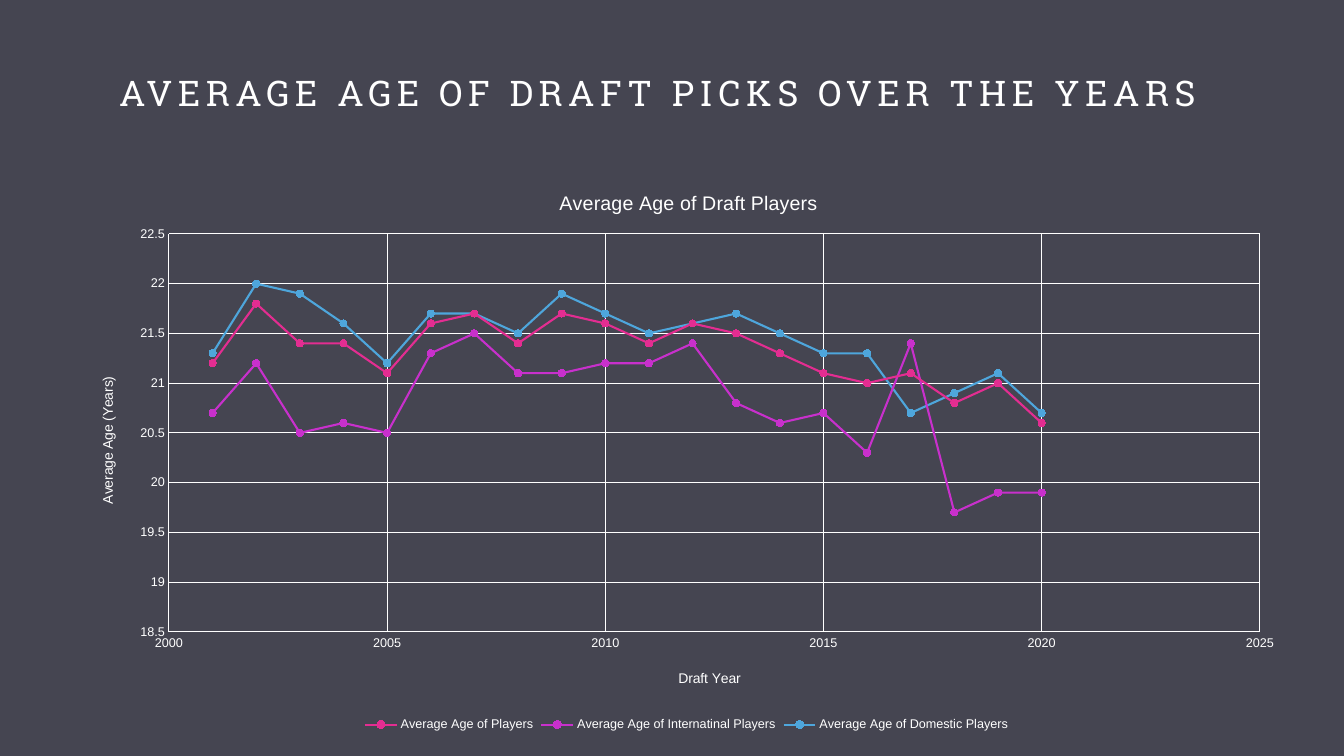
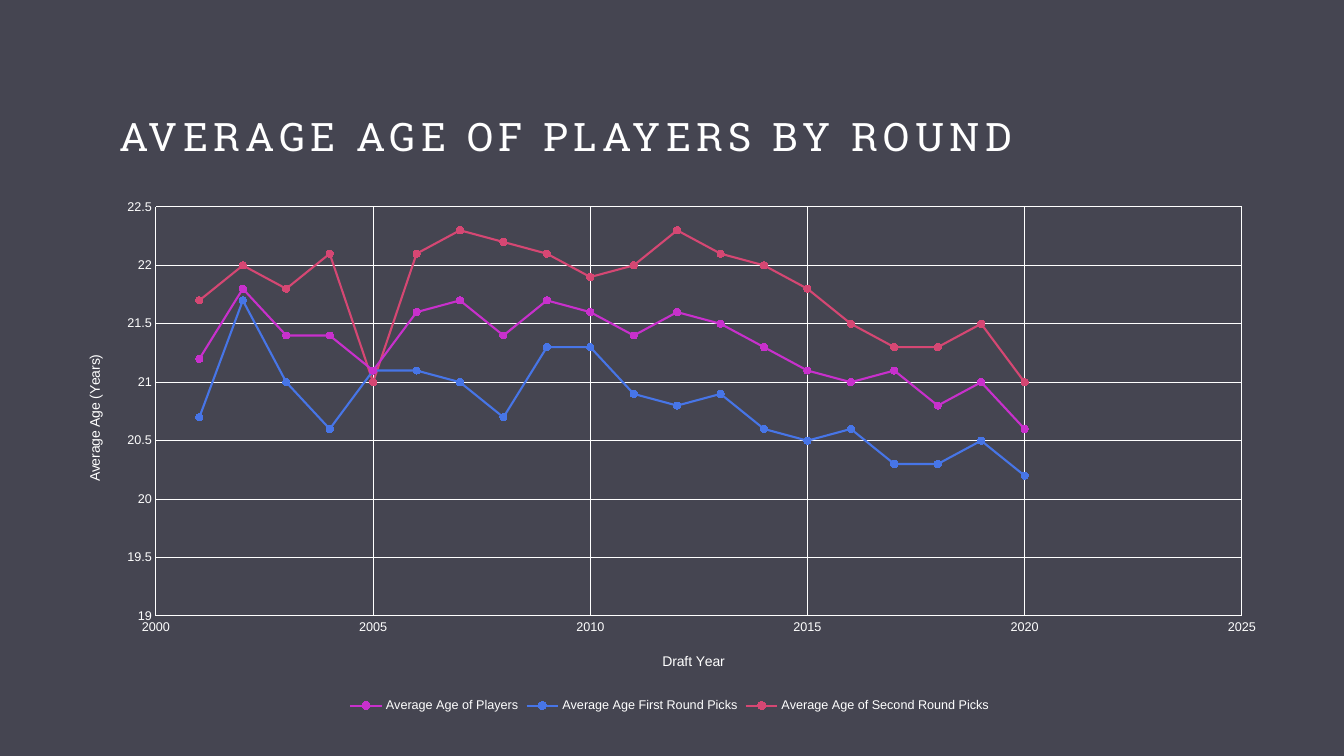
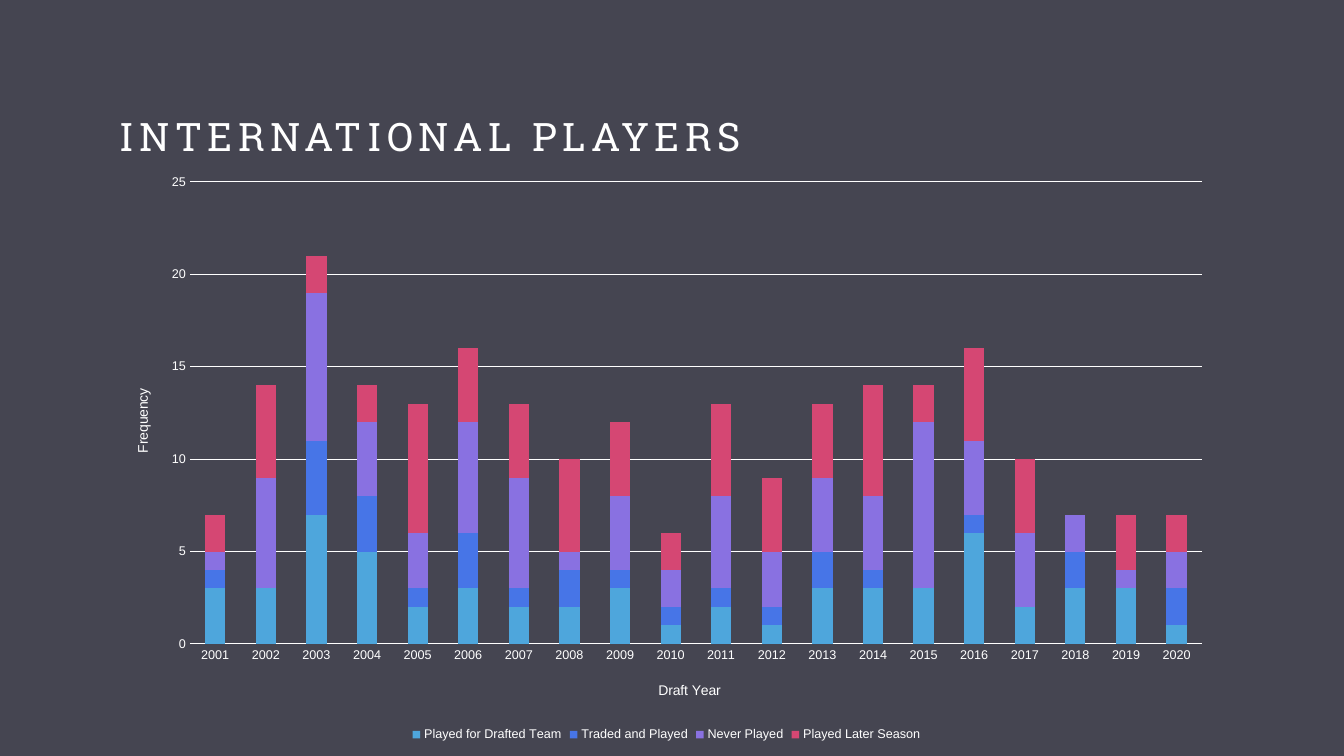
from dataclasses import dataclass
from pptx import Presentation
from pptx.chart.data import CategoryChartData, XyChartData
from pptx.dml.color import RGBColor
from pptx.enum.chart import XL_CHART_TYPE, XL_LEGEND_POSITION, XL_MARKER_STYLE, XL_TICK_MARK
from pptx.oxml import parse_xml
from pptx.oxml.ns import nsdecls
from pptx.util import Pt


@dataclass(frozen=True)
class Theme:
    """Colours, fonts and type sizes of the deck."""
    back: str = "454551"
    text: str = "FFFFFF"
    pink: str = "E32D91"
    magenta: str = "C830CC"
    sky: str = "4EA6DC"
    blue: str = "4775E7"
    violet: str = "8971E1"
    rose: str = "D54773"
    head_font: str = "Roboto Slab"
    body_font: str = "Arial"
    title_size: float = 28
    long_title_size: float = 25.2
    chart_title_size: float = 14
    axis_title_size: float = 10
    label_size: float = 9
    spacing: int = 4
    grid_width: float = 0.75
    series_width: float = 1.5
    marker: int = 5


T = Theme()
YEARS = range(2001, 2021)
ALL_AGES = [21.2, 21.8, 21.4, 21.4, 21.1, 21.6, 21.7, 21.4, 21.7, 21.6,
            21.4, 21.6, 21.5, 21.3, 21.1, 21, 21.1, 20.8, 21, 20.6]
ORIGIN_AGES = [
    ("Average Age of Players", T.pink, ALL_AGES),
    ("Average Age of Internatinal Players", T.magenta,
     [20.7, 21.2, 20.5, 20.6, 20.5, 21.3, 21.5, 21.1, 21.1, 21.2,
      21.2, 21.4, 20.8, 20.6, 20.7, 20.3, 21.4, 19.7, 19.9, 19.9]),
    ("Average Age of Domestic Players", T.sky,
     [21.3, 22, 21.9, 21.6, 21.2, 21.7, 21.7, 21.5, 21.9, 21.7,
      21.5, 21.6, 21.7, 21.5, 21.3, 21.3, 20.7, 20.9, 21.1, 20.7]),
]
ROUND_AGES = [
    ("Average Age of Players", T.magenta, ALL_AGES),
    ("Average Age First Round Picks", T.blue,
     [20.7, 21.7, 21, 20.6, 21.1, 21.1, 21, 20.7, 21.3, 21.3,
      20.9, 20.8, 20.9, 20.6, 20.5, 20.6, 20.3, 20.3, 20.5, 20.2]),
    ("Average Age of Second Round Picks", T.rose,
     [21.7, 22, 21.8, 22.1, 21, 22.1, 22.3, 22.2, 22.1, 21.9,
      22, 22.3, 22.1, 22, 21.8, 21.5, 21.3, 21.3, 21.5, 21]),
]
OUTCOMES = [
    ("Played for Drafted Team", T.sky,
     [3, 3, 7, 5, 2, 3, 2, 2, 3, 1, 2, 1, 3, 3, 3, 6, 2, 3, 3, 1]),
    ("Traded and Played", T.blue,
     [1, 0, 4, 3, 1, 3, 1, 2, 1, 1, 1, 1, 2, 1, 0, 1, 0, 2, 0, 2]),
    ("Never Played", T.violet,
     [1, 6, 8, 4, 3, 6, 6, 1, 4, 2, 5, 3, 4, 4, 9, 4, 4, 2, 1, 2]),
    ("Played Later Season", T.rose,
     [2, 5, 2, 2, 7, 4, 4, 5, 4, 2, 5, 4, 4, 6, 2, 5, 4, 0, 3, 2]),
]


def px(n):
    """Turn px into EMU."""
    return round(n * 914400 / 100.8)


def rgb(color):
    """Turn a hex string into a colour."""
    return RGBColor.from_string(color)


def style_font(font, size, name=T.body_font, color=T.text):
    """Set the face, size and colour of a font."""
    font.name, font.size, font.bold = name, Pt(size), False
    font.color.rgb = rgb(color)


def write_text(tf, text, size, name=T.body_font, color=T.text, spacing=0):
    """Write one formatted run into a text frame."""
    r = tf.paragraphs[0].add_run()
    r.text = text
    style_font(r.font, size, name, color)
    if spacing:
        r.font._element.set("spc", str(spacing * 100))


def style_line(line, color=T.text, width=T.grid_width):
    """Set the colour and width of a line."""
    line.color.rgb = rgb(color)
    line.width = Pt(width)


def make_layout(box, left, top, width=None, height=None):
    """Build a manual chart layout for px offsets inside a chart box."""
    parts = [("x", left / box[2]), ("y", top / box[3])]
    target = ""
    if width:
        target = '<c:layoutTarget val="inner"/>'
        parts += [("w", width / box[2]), ("h", height / box[3])]
    modes = "".join(f'<c:{k}Mode val="edge"/>' for k in "xy")
    sizes = "".join(f'<c:{k} val="{v:.4f}"/>' for k, v in parts)
    return parse_xml(f'<c:layout {nsdecls("c")}><c:manualLayout>{target}'
                     f'{modes}{sizes}</c:manualLayout></c:layout>')


def drop_layout(element):
    """Remove the layout that an element already has."""
    for old in element.xpath("c:layout"):
        element.remove(old)


def place_title(title, text, size, box, at, upright=False):
    """Write a chart or axis title at px offsets in the chart box."""
    tf = title.text_frame
    write_text(tf, text, size)
    if upright:
        body = tf._txBody.bodyPr
        body.set("rot", "-5400000")
        body.set("vert", "horz")
    drop_layout(title.element)
    title.element.xpath("c:tx")[0].addnext(make_layout(box, *at))


def style_axis(axis, low=None, high=None, step=None, grid=True, line=True):
    """Set the scale, lines and labels of an axis."""
    axis.has_major_gridlines = grid
    if grid:
        style_line(axis.major_gridlines.format.line)
    if line:
        style_line(axis.format.line)
    else:
        axis.format.line.fill.background()
    axis.major_tick_mark = axis.minor_tick_mark = XL_TICK_MARK.NONE
    style_font(axis.tick_labels.font, T.label_size)
    if step:
        axis.minimum_scale, axis.maximum_scale = low, high
        axis.major_unit = step


def add_chart(s, kind, data, box, plot, x_title, y_title, title=None):
    """Add a chart with its plot, titles and legend placed in its box."""
    chart = s.shapes.add_chart(kind, *map(px, box), data).chart
    style_font(chart.font, T.axis_title_size)
    chart.has_title = bool(title)
    if title:
        place_title(chart.chart_title, title[0], T.chart_title_size, box, title[1])
    place_title(chart.category_axis.axis_title, x_title[0], T.axis_title_size, box, x_title[1])
    place_title(chart.value_axis.axis_title, y_title[0], T.axis_title_size, box, y_title[1], True)
    area = chart.element.xpath("c:chart/c:plotArea")[0]
    drop_layout(area)
    area.insert(0, make_layout(box, *plot))
    chart.has_legend = True
    chart.legend.position = XL_LEGEND_POSITION.BOTTOM
    chart.legend.include_in_layout = False
    style_font(chart.legend.font, T.label_size)
    chart.plots[0].vary_by_categories = False
    return chart


def add_age_chart(s, box, rows, low, plot, x_at, y_at, title=None):
    """Add a scatter chart of average ages by draft year."""
    data = XyChartData()
    for name, _, ages in rows:
        ser = data.add_series(name)
        for year, age in zip(YEARS, ages):
            ser.add_data_point(year, age)
    chart = add_chart(s, XL_CHART_TYPE.XY_SCATTER_LINES, data, box, plot,
                      ("Draft Year", x_at), ("Average Age (Years)", y_at), title)
    style_axis(chart.category_axis, 2000, 2025, 5)
    style_axis(chart.value_axis, low, 22.5, 0.5)
    for ser, (_, color, _) in zip(chart.plots[0].series, rows):
        ser.smooth = False
        style_line(ser.format.line, color, T.series_width)
        ser.marker.style = XL_MARKER_STYLE.CIRCLE
        ser.marker.size = T.marker
        ser.marker.format.fill.solid()
        ser.marker.format.fill.fore_color.rgb = rgb(color)
        style_line(ser.marker.format.line, color)


def add_outcome_chart(s, box, rows, plot, x_at, y_at):
    """Add a stacked column chart of outcomes by draft year."""
    data = CategoryChartData()
    data.categories = [str(year) for year in YEARS]
    for name, _, counts in rows:
        data.add_series(name, counts)
    chart = add_chart(s, XL_CHART_TYPE.COLUMN_STACKED, data, box, plot,
                      ("Draft Year", x_at), ("Frequency", y_at))
    style_axis(chart.category_axis, grid=False)
    style_axis(chart.value_axis, 0, 25, 5, line=False)
    chart.plots[0].gap_width, chart.plots[0].overlap = 150, 100
    for ser, (_, color, _) in zip(chart.plots[0].series, rows):
        ser.format.fill.solid()
        ser.format.fill.fore_color.rgb = rgb(color)


def add_slide(prs, title, top=112, size=T.title_size):
    """Add a blank slide with its heading."""
    s = prs.slides.add_slide(prs.slide_layouts[6])
    tf = s.shapes.add_textbox(*map(px, (119, top, 1106, 73))).text_frame
    tf.word_wrap = True
    tf.margin_left = tf.margin_right = tf.margin_top = tf.margin_bottom = 0
    write_text(tf, title, size, T.head_font, spacing=T.spacing)
    return s


def main():
    """Build and save the deck."""
    prs = Presentation()
    prs.slide_width, prs.slide_height = px(1344), px(756)
    fill = prs.slide_master.background.fill
    fill.solid()
    fill.fore_color.rgb = rgb(T.back)

    s = add_slide(prs, "AVERAGE AGE OF DRAFT PICKS OVER THE YEARS", 71, T.long_title_size)
    add_age_chart(s, (73, 166, 1227, 570), ORIGIN_AGES, 18.5, (96, 68, 1091, 398),
                  (603, 501), (23, 208), ("Average Age of Draft Players", (483, 21)))

    s = add_slide(prs, "AVERAGE AGE OF PLAYERS BY ROUND")
    add_age_chart(s, (59, 188, 1221, 529), ROUND_AGES, 19, (97, 19, 1086, 409),
                  (601, 462), (24, 164))

    s = add_slide(prs, "INTERNATIONAL PLAYERS")
    add_outcome_chart(s, (108, 163, 1117, 583), OUTCOMES, (82, 19, 1012, 462),
                      (548, 516), (23, 223))
    prs.save("out.pptx")


if __name__ == "__main__":
    main()
